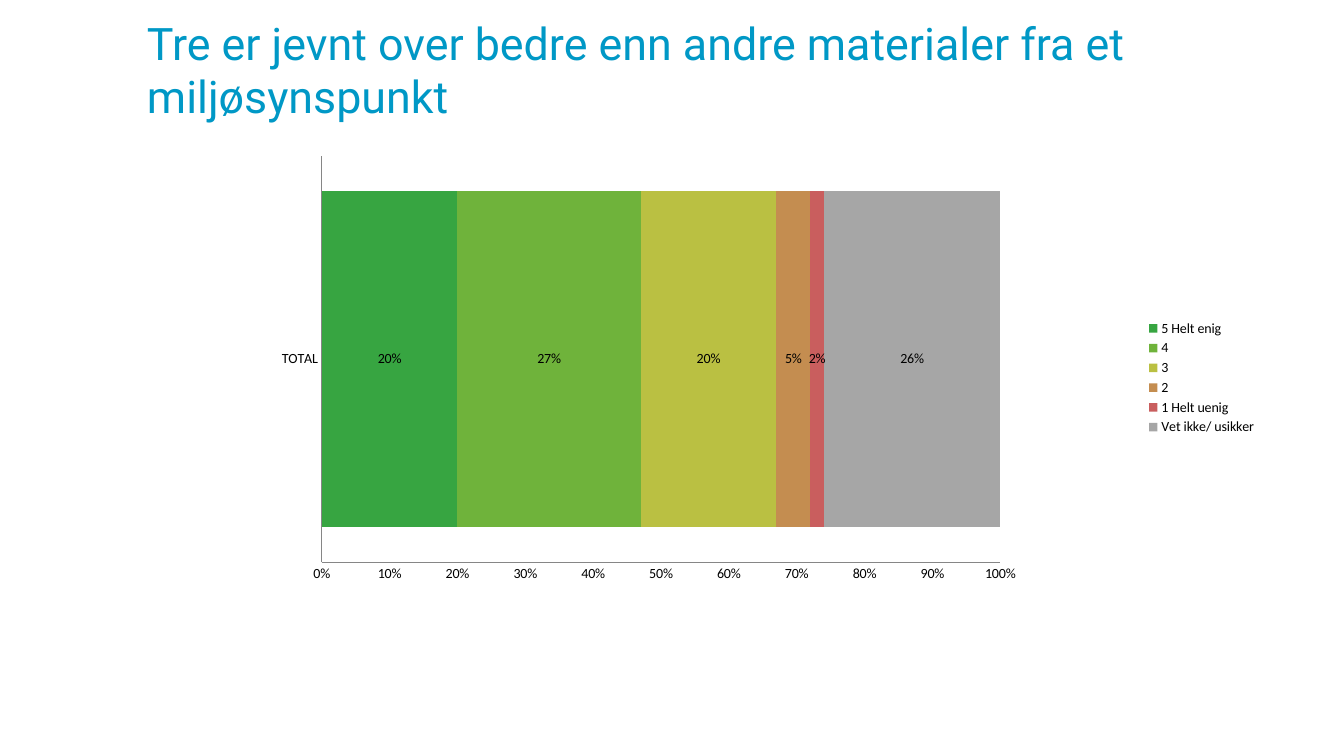
from lxml import etree
from pptx import Presentation
from pptx import util as u
from pptx.chart.data import CategoryChartData
from pptx.dml.color import RGBColor
from pptx.enum import chart as charts, text
from pptx.oxml import ns

TITLE = "Tre er jevnt over bedre enn andre materialer fra et miljøsynspunkt"
CATEGORY = "TOTAL"
ANSWERS = [
    ("5 Helt enig", 0.20, "37A541"),
    ("4", 0.27, "6FB33B"),
    ("3", 0.20, "BAC042"),
    ("2", 0.05, "C48D50"),
    ("1 Helt uenig", 0.02, "C95E5E"),
    ("Vet ikke/ usikker", 0.26, "A6A6A6"),
]
TITLE_BOX = (3.45, 0.15, 28.7, 3.18)
CHART_BOX = (1.93, 3.02, 30, 13)
PLOT_AREA = {"x": 0.206, "y": 0.07, "w": 0.57, "h": 0.788}


def color(value):
    return RGBColor.from_string(value)


def box(lengths):
    return [u.Cm(length) for length in lengths]


def style_font(font, name, size, value):
    font.name = name
    font.size = u.Pt(size)
    font.color.rgb = color(value)


def add_title(slide):
    title = slide.shapes.title
    title.left, title.top, title.width, title.height = box(TITLE_BOX)
    frame = title.text_frame
    frame.text = TITLE
    frame.word_wrap = True
    frame.auto_size = text.MSO_AUTO_SIZE.NONE
    frame.vertical_anchor = text.MSO_ANCHOR.MIDDLE
    paragraph = frame.paragraphs[0]
    paragraph.alignment = text.PP_ALIGN.LEFT
    style_font(paragraph.runs[0].font, "Roboto", 32, "0098C6")


def place_plot(chart):
    """Fix the inner plot area as fractions of the chart."""
    plot_area = chart.plots[0]._element.getparent()
    for old_layout in plot_area.findall(ns.qn("c:layout")):
        plot_area.remove(old_layout)
    layout = etree.Element(ns.qn("c:layout"))
    manual = etree.SubElement(layout, ns.qn("c:manualLayout"))
    settings = {"layoutTarget": "inner", "xMode": "edge", "yMode": "edge", **PLOT_AREA}
    for name, value in settings.items():
        etree.SubElement(manual, ns.qn("c:" + name)).set("val", str(value))
    plot_area.insert(0, layout)


def style_axis(axis):
    axis.has_major_gridlines = False
    axis.major_tick_mark = charts.XL_TICK_MARK.NONE
    axis.minor_tick_mark = charts.XL_TICK_MARK.NONE
    axis.format.line.color.rgb = color("868686")
    axis.format.line.width = u.Pt(0.75)
    style_font(axis.tick_labels.font, "Calibri", 10, "000000")


def style_series(series, fill):
    series.format.fill.solid()
    series.format.fill.fore_color.rgb = color(fill)
    labels = series.data_labels
    labels.show_value = True
    labels.number_format = "0%"
    labels.number_format_is_linked = False
    labels.position = charts.XL_LABEL_POSITION.CENTER
    style_font(labels.font, "Calibri", 10, "000000")


def add_answer_chart(slide):
    data = CategoryChartData(number_format="0%")
    data.categories = [CATEGORY]
    for name, share, _ in ANSWERS:
        data.add_series(name, [share])
    chart = slide.shapes.add_chart(
        charts.XL_CHART_TYPE.BAR_STACKED, *box(CHART_BOX), data
    ).chart
    chart.has_title = False
    style_font(chart.font, "Calibri", 18, "000000")

    plot = chart.plots[0]
    plot.gap_width = 21
    plot.overlap = 100
    plot.vary_by_categories = False
    for series, (_, _, fill) in zip(plot.series, ANSWERS):
        style_series(series, fill)

    style_axis(chart.category_axis)
    style_axis(chart.value_axis)
    chart.value_axis.minimum_scale = 0
    chart.value_axis.maximum_scale = 1
    chart.value_axis.major_unit = 0.1
    chart.value_axis.tick_labels.number_format = "0%"
    chart.value_axis.tick_labels.number_format_is_linked = False

    chart.has_legend = True
    chart.legend.position = charts.XL_LEGEND_POSITION.RIGHT
    chart.legend.include_in_layout = False
    style_font(chart.legend.font, "Calibri", 10, "000000")
    place_plot(chart)


def main():
    presentation = Presentation()
    presentation.slide_width = u.Cm(33.87)
    presentation.slide_height = u.Cm(19.05)
    slide = presentation.slides.add_slide(presentation.slide_layouts[5])
    add_title(slide)
    add_answer_chart(slide)
    presentation.save("out.pptx")


if __name__ == "__main__":
    main()
